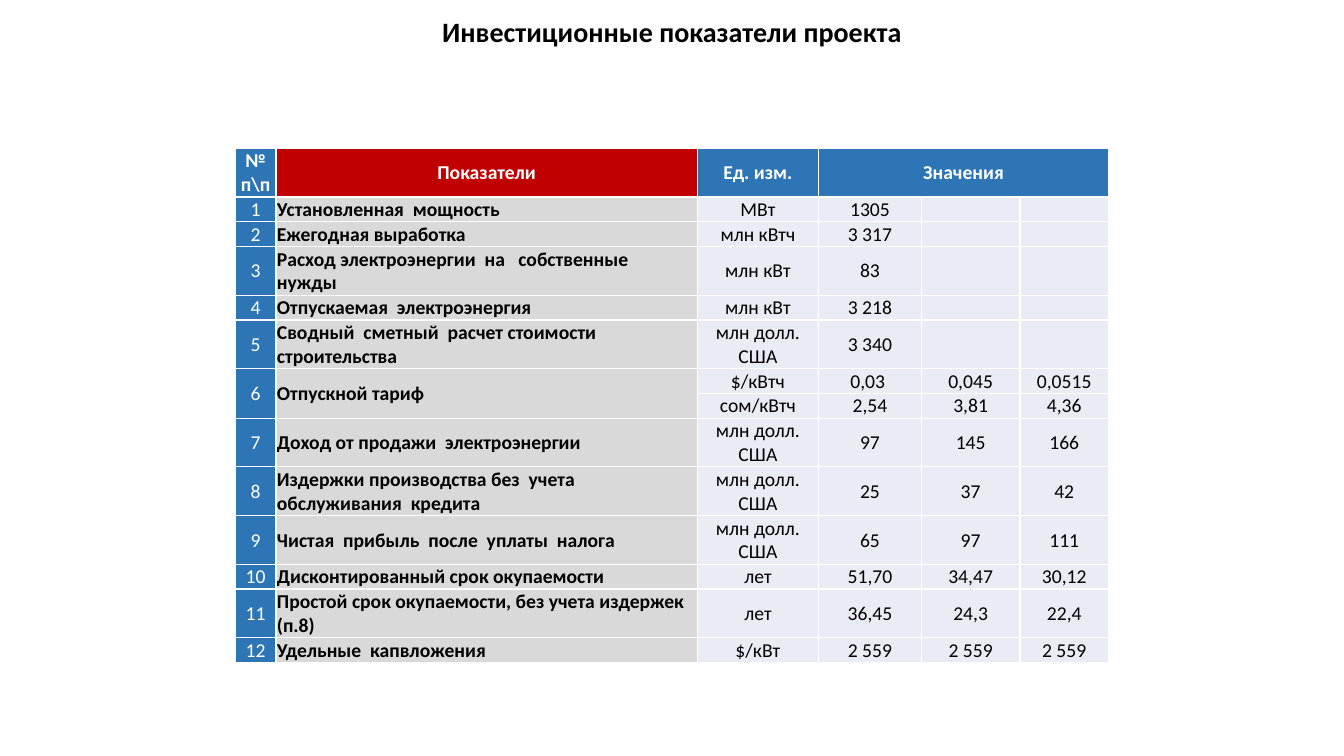
from dataclasses import dataclass

from lxml import etree
from pptx import Presentation
from pptx.dml.color import RGBColor
from pptx.enum.text import MSO_ANCHOR as Anchor, PP_ALIGN as Align
from pptx.oxml.ns import qn
from pptx.slide import Slide
from pptx.table import Table, _Cell as Cell
from pptx.text.text import _Paragraph as Paragraph
from pptx.util import Pt

FONT = "Calibri"
WHITE, BLACK = "FFFFFF", "000000"
BLUE, RED, GREY, PALE = "2E75B6", "C00000", "D9D9D9", "E9EBF5"
CELL_SIZE = 14
COLUMN_WIDTHS = (29.2, 300.8, 86.8, 73.3, 70.6, 63.1)
LINE_HEIGHT, ROW_PADDING = 17.1, 0.6


@dataclass(frozen=True)
class CellStyle:
    fill: str
    color: str = BLACK
    bold: bool = False
    align: Align = Align.CENTER


@dataclass(frozen=True)
class Indicator:
    number: str
    name: str
    unit: str
    values: tuple[str, ...]
    lines: int = 1


HEADER = CellStyle(BLUE, WHITE, bold=True)
HEADER_STYLES = (HEADER, CellStyle(RED, WHITE, bold=True)) + (HEADER,) * 4
BODY_STYLES = (
    CellStyle(BLUE, WHITE),
    CellStyle(GREY, bold=True, align=Align.LEFT),
) + (CellStyle(PALE),) * 4

ROWS = (
    Indicator("№ п\\п", "Показатели", "Ед. изм.", ("Значения",), 2),
    Indicator("1", "Установленная  мощность", "МВт", ("1305",)),
    Indicator("2", "Ежегодная выработка", "млн кВтч", ("3 317",)),
    Indicator("3", "Расход электроэнергии  на   собственные   нужды", "млн кВт", ("83",), 2),
    Indicator("4", "Отпускаемая  электроэнергия", "млн кВт", ("3 218",)),
    Indicator("5", "Сводный  сметный  расчет стоимости  строительства", "млн долл. США", ("3 340",), 2),
    Indicator("6", "Отпускной тариф", "$/кВтч", ("0,03 ", "0,045", " 0,0515 ")),
    Indicator("", "", "сом/кВтч", ("2,54", "3,81", "4,36")),
    Indicator("7", "Доход от продажи  электроэнергии", "млн долл. США", ("97", "145", "166"), 2),
    Indicator("8", "Издержки производства без  учета  обслуживания  кредита", "млн долл. США",
              ("25", "37", "42"), 2),
    Indicator("9", "Чистая  прибыль  после  уплаты  налога", "млн долл. США", ("65", "97", "111"), 2),
    Indicator("10", "Дисконтированный срок окупаемости", "лет", ("51,70", "34,47", "30,12")),
    Indicator("11", "Простой срок окупаемости, без учета издержек (п.8)", "лет",
              ("36,45", "24,3", "22,4"), 2),
    Indicator("12", "Удельные  капвложения", "$/кВт", ("2 559", "2 559", "2 559")),
)
TARIFF_ROW = 6


def rgb(value: str) -> RGBColor:
    return RGBColor.from_string(value)


def format_runs(paragraph: Paragraph, size: float, color: str, bold: bool) -> None:
    for run in paragraph.runs:
        run.font.name = FONT
        run.font.size = Pt(size)
        run.font.bold = bold
        run.font.color.rgb = rgb(color)


def add_borders(cell: Cell) -> None:
    properties = cell._tc.get_or_add_tcPr()
    for index, side in enumerate(("a:lnL", "a:lnR", "a:lnT", "a:lnB")):
        line = etree.Element(qn(side), w=str(Pt(1)))
        fill = etree.SubElement(line, qn("a:solidFill"))
        etree.SubElement(fill, qn("a:srgbClr"), val=WHITE)
        properties.insert(index, line)


def fill_cell(cell: Cell, text: str, style: CellStyle) -> None:
    cell.margin_left = cell.margin_right = cell.margin_top = Pt(ROW_PADDING)
    cell.margin_bottom = Pt(0)
    cell.vertical_anchor = Anchor.MIDDLE
    cell.fill.solid()
    cell.fill.fore_color.rgb = rgb(style.fill)
    add_borders(cell)
    paragraph = cell.text_frame.paragraphs[0]
    paragraph.alignment = style.align
    if text:
        paragraph.text = text
        format_runs(paragraph, CELL_SIZE, style.color, style.bold)
    else:
        # An empty cell keeps the row low only with its own text size
        etree.SubElement(paragraph._p, qn("a:endParaRPr"), sz=str(CELL_SIZE * 100))


def add_title(slide: Slide, text: str) -> None:
    title = slide.shapes.title
    title.left, title.top, title.width, title.height = Pt(278), Pt(8.2), Pt(404), Pt(31)
    outline = etree.SubElement(title._element.spPr, qn("a:prstGeom"), prst="roundRect")
    etree.SubElement(outline, qn("a:avLst"))
    title.text_frame.text = text
    title.text_frame.vertical_anchor = Anchor.MIDDLE
    paragraph = title.text_frame.paragraphs[0]
    paragraph.alignment = Align.CENTER
    paragraph.line_spacing = 0.9
    format_runs(paragraph, 20, BLACK, bold=True)


def add_indicator_table(slide: Slide) -> Table:
    heights = [row.lines * LINE_HEIGHT + ROW_PADDING for row in ROWS]
    frame = slide.shapes.add_table(
        len(ROWS), len(COLUMN_WIDTHS), Pt(168), Pt(105.9), Pt(sum(COLUMN_WIDTHS)), Pt(sum(heights))
    )
    table = frame.table
    table.first_row = table.horz_banding = False
    for column, width in zip(table.columns, COLUMN_WIDTHS):
        column.width = Pt(width)
    for index, (row, height) in enumerate(zip(ROWS, heights)):
        table.rows[index].height = Pt(height)
        styles = BODY_STYLES if index else HEADER_STYLES
        blanks = ("",) * (3 - len(row.values))
        texts = (row.number, row.name, row.unit, *row.values, *blanks)
        for cell, text, style in zip(table.rows[index].cells, texts, styles):
            fill_cell(cell, text, style)
    return table


def main() -> None:
    presentation = Presentation()
    presentation.slide_width, presentation.slide_height = Pt(960), Pt(540)
    slide = presentation.slides.add_slide(presentation.slide_layouts[5])

    # Title
    add_title(slide, "Инвестиционные показатели проекта")

    # Table, with the values header and the two-row tariff merged
    table = add_indicator_table(slide)
    table.cell(0, 3).merge(table.cell(0, 5))
    for column in (0, 1):
        table.cell(TARIFF_ROW, column).merge(table.cell(TARIFF_ROW + 1, column))

    presentation.save("out.pptx")


if __name__ == "__main__":
    main()
